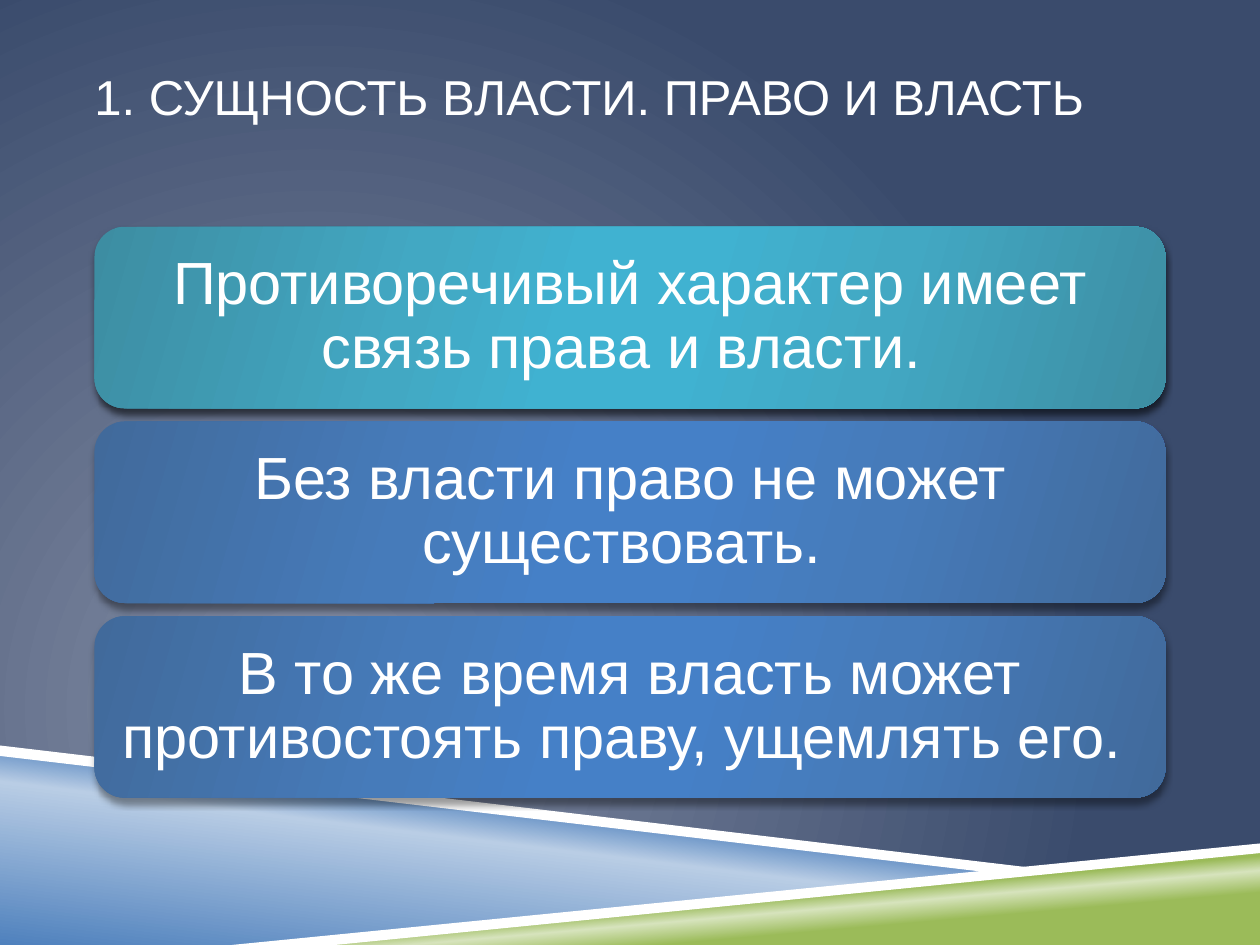
from lxml.etree import SubElement
from pptx import Presentation
from pptx.dml.color import RGBColor
from pptx.enum.shapes import MSO_SHAPE as Shape
from pptx.enum.text import MSO_ANCHOR as Anchor, PP_ALIGN as Align
from pptx.oxml.ns import qn
from pptx.util import Pt

# Colours
WHITE = RGBColor(0xFF, 0xFF, 0xFF)
BLACK = RGBColor(0, 0, 0)
HAZE, NAVY = RGBColor(0x86, 0x8F, 0xA6), RGBColor(0x3A, 0x4B, 0x6C)
BLUE, PALE_BLUE = RGBColor(0x4F, 0x81, 0xBD), RGBColor(0xB9, 0xCD, 0xE5)
GREEN, PALE_GREEN = RGBColor(0x9B, 0xBB, 0x59), RGBColor(0xD7, 0xE4, 0xBD)
# Card tones: edge, between, centre
TEAL_TONES = (RGBColor(0x3D, 0x8D, 0xA2), RGBColor(0x42, 0xA8, 0xC3),
              RGBColor(0x40, 0xB2, 0xD1))
BLUE_TONES = (RGBColor(0x41, 0x6A, 0x9B), RGBColor(0x46, 0x7B, 0xBA),
              RGBColor(0x45, 0x80, 0xC7))

# Content
TITLE = "1. СУЩНОСТЬ ВЛАСТИ. ПРАВО И ВЛАСТЬ"
CARDS = [  # text, tones, shadow opacity in percent, shadow distance
    ("Противоречивый характер имеет связь права и власти. ", TEAL_TONES, 58, 3),
    ("Без власти право не может существовать. ", BLUE_TONES, 40, 3.3),
    ("В то же время власть может противостоять праву, ущемлять его. ",
     BLUE_TONES, 40, 3.3),
]
BLUE_STOPS = [(0, BLUE), (52, PALE_BLUE), (66, BLUE)]
GREEN_STOPS = [(28, GREEN), (40, PALE_GREEN), (48, GREEN)]
WEDGES = [  # corners, gradient stops (None for white), angle
    ([(0, 430), (570, 498), (144, 540), (0, 540)], BLUE_STOPS, 277),
    ([(142.5, 540), (720, 484), (720, 540)], GREEN_STOPS, 265),
    ([(0, 426), (0, 432), (569, 499), (599, 497)], None, 0),
    ([(720, 482), (132.5, 540), (191.5, 540), (720, 487.5)], None, 0),
]

# Layout
MARGIN, CARD_WIDTH = 54, 612
CARD_TOP, CARD_HEIGHT, CARD_PITCH = 129.6, 103.75, 111.25
CARD_INSET = 5


def fill_gradient(fill, owner, stops, angle=None, focus=None):
    """Linear at an angle, or circular around a focus rectangle."""
    fill.gradient()
    gradient = next(owner.iter(qn("a:gradFill")))
    for child in list(gradient):
        gradient.remove(child)
    stop_list = SubElement(gradient, qn("a:gsLst"))
    for position, colour in stops:
        stop = SubElement(stop_list, qn("a:gs"), pos=str(position * 1000))
        SubElement(stop, qn("a:srgbClr"), val=str(colour))
    if focus:
        circle = SubElement(gradient, qn("a:path"), path="circle")
        SubElement(circle, qn("a:fillToRect"),
                   {side: str(share * 1000) for side, share in zip("ltrb", focus)})
    else:
        SubElement(gradient, qn("a:lin"), ang=str(angle * 60000), scaled="0")


def add_shadow(shape, opacity, distance):
    effects = shape.element.spPr.find(qn("a:effectLst"))
    shadow = SubElement(effects, qn("a:outerShdw"), blurRad=str(Pt(4)),
                        dist=str(Pt(distance)), dir=str(90 * 60000),
                        rotWithShape="0")
    colour = SubElement(shadow, qn("a:srgbClr"), val=str(BLACK))
    SubElement(colour, qn("a:alpha"), val=str(opacity * 1000))


def add_text(page, text, left, top, width, height, *, size, inset,
             align=Align.LEFT, spacing=None, after=None):
    box = page.shapes.add_textbox(Pt(left), Pt(top), Pt(width), Pt(height))
    frame = box.text_frame
    frame.word_wrap = True
    frame.vertical_anchor = Anchor.MIDDLE
    frame.margin_left = frame.margin_right = Pt(inset[0])
    frame.margin_top = frame.margin_bottom = Pt(inset[1])
    para = frame.paragraphs[0]
    para.alignment = align
    para.line_spacing = spacing
    para.space_after = after
    span = para.add_run()
    span.text = text
    span.font.name, span.font.size = "Arial", Pt(size)
    span.font.color.rgb = WHITE


def add_wedge(page, corners, stops, angle):
    points = [(Pt(x), Pt(y)) for x, y in corners]
    builder = page.shapes.build_freeform(*points[0], scale=1.0)
    builder.add_line_segments(points[1:], close=True)
    wedge = builder.convert_to_shape()
    wedge.shadow.inherit = False
    wedge.line.fill.background()
    if stops:
        fill_gradient(wedge.fill, wedge.element, stops, angle)
    else:
        wedge.fill.solid()
        wedge.fill.fore_color.rgb = WHITE


def add_card(page, top, text, tones, opacity, distance):
    card = page.shapes.add_shape(Shape.ROUNDED_RECTANGLE, Pt(MARGIN), Pt(top),
                                 Pt(CARD_WIDTH), Pt(CARD_HEIGHT))
    card.shadow.inherit = False
    card.line.fill.background()
    edge, between, centre = tones
    stops = zip((0, 30, 45, 55, 73, 100),
                (edge, between, centre, centre, between, edge))
    fill_gradient(card.fill, card.element, stops, angle=16)
    add_shadow(card, opacity, distance)
    add_text(page, text, MARGIN + CARD_INSET, top + CARD_INSET,
             CARD_WIDTH - 2 * CARD_INSET, CARD_HEIGHT - 2 * CARD_INSET,
             size=34, inset=(10, 10), align=Align.CENTER, spacing=0.9,
             after=Pt(12))


def main():
    deck = Presentation()
    deck.slide_width, deck.slide_height = Pt(720), Pt(540)
    page = deck.slides.add_slide(deck.slide_layouts[6])

    # Backdrop
    fill_gradient(page.background.fill, page.element, [(0, HAZE), (100, NAVY)],
                  focus=(50, 100, 100, 50))
    for wedge in WEDGES:
        add_wedge(page, *wedge)

    # Title and cards
    add_text(page, TITLE, MARGIN, 21.6, CARD_WIDTH, 67, size=28, inset=(0, 3.6))
    for row, card in enumerate(CARDS):
        add_card(page, CARD_TOP + row * CARD_PITCH, *card)

    deck.save("out.pptx")


if __name__ == "__main__":
    main()
